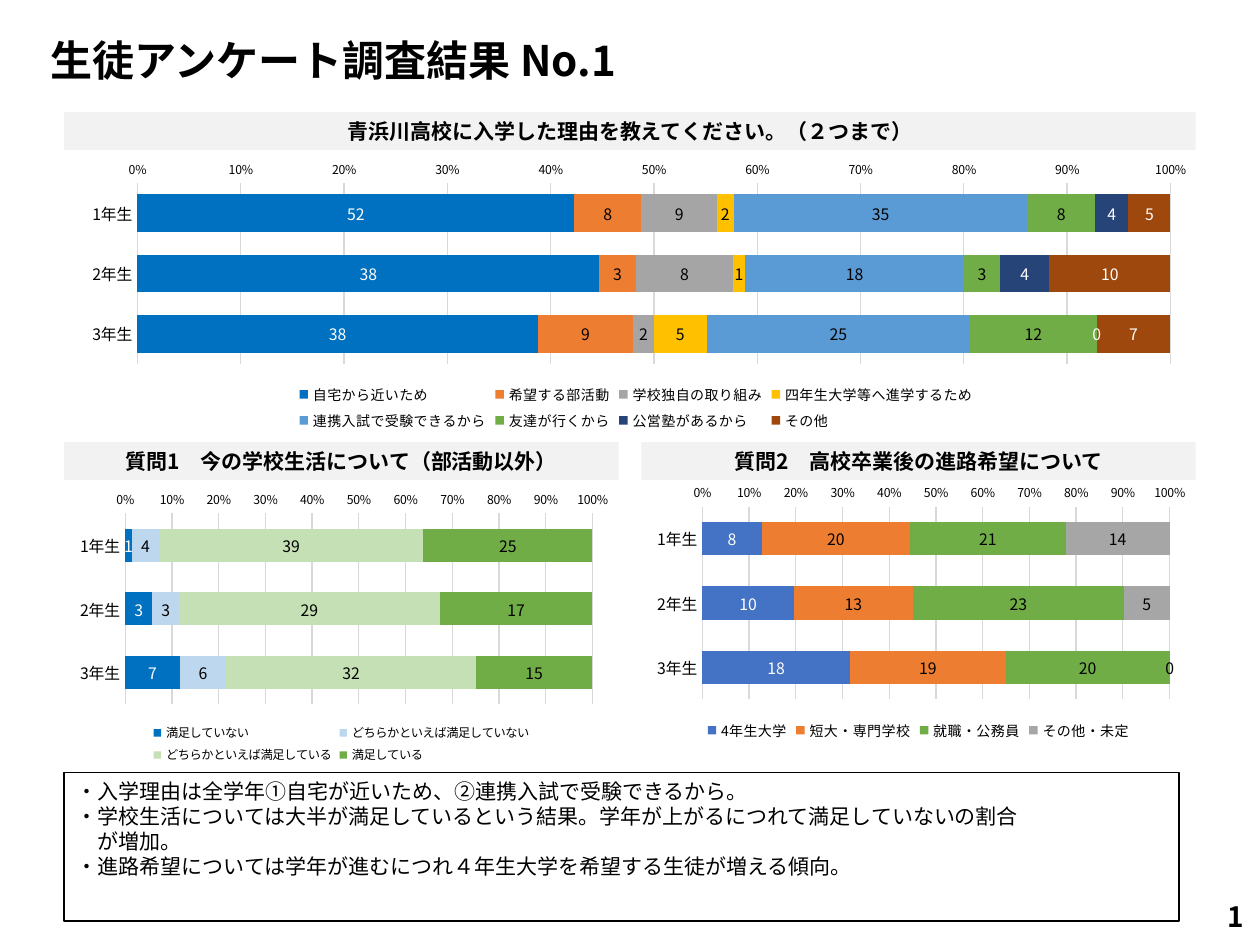
import pptx
import pptx.chart.data
import pptx.dml.color
import pptx.enum.chart
import pptx.enum.shapes
import pptx.enum.text
import pptx.oxml
import pptx.oxml.ns
import pptx.util
from pptx.util import Inches

FONT = "Noto Sans CJK JP"
BLACK, WHITE, GRID = "000000", "FFFFFF", "D9D9D9"
GRADES = ["1年生", "2年生", "3年生"]
LEFT, RIGHT_COLUMN, HALF_WIDTH = 0.51, 5.09, 4.4

REASONS = [
    ("自宅から近いため", (52, 38, 38), "0070C0", WHITE),
    ("希望する部活動", (8, 3, 9), "ED7D31", BLACK),
    ("学校独自の取り組み", (9, 8, 2), "A5A5A5", BLACK),
    ("四年生大学等へ進学するため", (2, 1, 5), "FFC000", BLACK),
    ("連携入試で受験できるから", (35, 18, 25), "5B9BD5", BLACK),
    ("友達が行くから", (8, 3, 12), "70AD47", BLACK),
    ("公営塾があるから", (4, 4, 0), "264478", WHITE),
    ("その他", (5, 10, 7), "9E480E", WHITE),
]
SATISFACTION = [
    ("満足していない", (1, 3, 7), "0070C0", WHITE),
    ("どちらかといえば満足していない", (4, 3, 6), "BDD7EE", BLACK),
    ("どちらかといえば満足している", (39, 29, 32), "C5E0B4", BLACK),
    ("満足している", (25, 17, 15), "70AD47", BLACK),
]
FUTURE_PATHS = [
    ("4年生大学", (8, 10, 18), "4472C4", WHITE),
    ("短大・専門学校", (20, 13, 19), "ED7D31", BLACK),
    ("就職・公務員", (21, 23, 20), "70AD47", BLACK),
    ("その他・未定", (14, 5, 0), "A6A6A6", BLACK),
]
FINDINGS = [
    ["・入学理由は全学年①自宅が近いため、②連携入試で受験できるから。"],
    ["・学校生活については大半が満足しているという結果。学年が上がるにつれて満足していないの割合", "が増加。"],
    ["・進路希望については学年が進むにつれ４年生大学を希望する生徒が増える傾向。"],
]


def rgb(value):
    return pptx.dml.color.RGBColor.from_string(value)


def style_font(font, size, color=BLACK, bold=False):
    font.name = FONT
    font.size = pptx.util.Pt(size)
    font.bold = bold
    font.color.rgb = rgb(color)


def set_east_asian_font(element):
    for latin in list(element.iter(pptx.oxml.ns.qn("a:latin"))):
        latin.addnext(pptx.oxml.parse_xml(
            f'<a:ea {pptx.oxml.ns.nsdecls("a")} typeface="{FONT}"/>'))


def place(shape, left, top, width, height):
    shape.left, shape.top = Inches(left), Inches(top)
    shape.width, shape.height = Inches(width), Inches(height)


def add_run(paragraph, text, size, bold=False):
    run = paragraph.add_run()
    run.text = text
    style_font(run.font, size, bold=bold)


def write_line(shape, text, size, alignment):
    frame = shape.text_frame
    frame.word_wrap = True
    frame.auto_size = pptx.enum.text.MSO_AUTO_SIZE.NONE
    frame.vertical_anchor = pptx.enum.text.MSO_ANCHOR.MIDDLE
    paragraph = frame.paragraphs[0]
    paragraph.alignment = alignment
    add_run(paragraph, text, size, bold=True)


def add_rectangle(slide, left, top, width, height):
    shape = slide.shapes.add_shape(
        pptx.enum.shapes.MSO_SHAPE.RECTANGLE,
        Inches(left), Inches(top), Inches(width), Inches(height))
    shape.shadow.inherit = False
    return shape


def add_heading(slide, text, left, top, width):
    shape = add_rectangle(slide, left, top, width, 0.3)
    shape.fill.solid()
    shape.fill.fore_color.rgb = rgb("F2F2F2")
    shape.line.fill.background()
    write_line(shape, text, 12, pptx.enum.text.PP_ALIGN.CENTER)


def set_plot_layout(chart, x, y, width, height):
    plot_area = chart.element.find(".//" + pptx.oxml.ns.qn("c:plotArea"))
    for layout in plot_area.findall(pptx.oxml.ns.qn("c:layout")):
        plot_area.remove(layout)
    plot_area.insert(0, pptx.oxml.parse_xml(
        f'<c:layout {pptx.oxml.ns.nsdecls("c")}><c:manualLayout>'
        '<c:layoutTarget val="inner"/><c:xMode val="edge"/><c:yMode val="edge"/>'
        f'<c:x val="{x}"/><c:y val="{y}"/><c:w val="{width}"/><c:h val="{height}"/>'
        '</c:manualLayout></c:layout>'))


def style_axes(chart):
    for axis, size in ((chart.category_axis, 9), (chart.value_axis, 7)):
        axis.major_tick_mark = pptx.enum.chart.XL_TICK_MARK.NONE
        axis.minor_tick_mark = pptx.enum.chart.XL_TICK_MARK.NONE
        style_font(axis.tick_labels.font, size)
    categories, values = chart.category_axis, chart.value_axis
    categories.reverse_order = True
    categories.has_major_gridlines = False
    values.has_major_gridlines = True
    values.major_unit = 0.1
    values.tick_labels.number_format = "0%"
    values.tick_labels.number_format_is_linked = False
    values.format.line.fill.background()
    for line in (categories.format.line, values.major_gridlines.format.line):
        line.color.rgb = rgb(GRID)
        line.width = pptx.util.Pt(0.75)


def add_answer_chart(slide, answers, box, layout, gap, legend_size):
    data = pptx.chart.data.CategoryChartData()
    data.categories = GRADES
    for name, values, _, _ in answers:
        data.add_series(name, values)
    chart = slide.shapes.add_chart(
        pptx.enum.chart.XL_CHART_TYPE.BAR_STACKED_100,
        *[Inches(length) for length in box], data).chart
    style_font(chart.font, 10)
    chart.has_title = False
    chart.has_legend = True
    chart.legend.position = pptx.enum.chart.XL_LEGEND_POSITION.BOTTOM
    chart.legend.include_in_layout = False
    style_font(chart.legend.font, legend_size)
    style_axes(chart)
    plot = chart.plots[0]
    plot.gap_width = gap
    plot.overlap = 100
    plot.vary_by_categories = False
    for series, (_, _, color, label_color) in zip(plot.series, answers):
        series.format.fill.solid()
        series.format.fill.fore_color.rgb = rgb(color)
        labels = series.data_labels
        labels.show_value = True
        labels.position = pptx.enum.chart.XL_LABEL_POSITION.CENTER
        style_font(labels.font, 9, label_color)
    set_plot_layout(chart, *layout)
    set_east_asian_font(chart.element)


def write_findings(slide):
    border = add_rectangle(slide, LEFT, 6.13, 8.85, 1.18)
    border.fill.background()
    border.line.color.rgb = rgb(BLACK)
    border.line.width = pptx.util.Pt(1)
    body = slide.placeholders[1]
    place(body, LEFT, 6.13, 8.85, 1.21)
    frame = body.text_frame
    frame.auto_size = pptx.enum.text.MSO_AUTO_SIZE.NONE
    for index, lines in enumerate(FINDINGS):
        paragraph = frame.add_paragraph() if index else frame.paragraphs[0]
        paragraph.space_before = pptx.util.Pt(0)
        paragraph.line_spacing = pptx.util.Pt(14.3)
        properties = paragraph._p.get_or_add_pPr()
        properties.set("marL", str(pptx.util.Pt(12)))
        properties.set("indent", str(-pptx.util.Pt(12)))
        properties.append(pptx.oxml.parse_xml(
            f'<a:buNone {pptx.oxml.ns.nsdecls("a")}/>'))
        for number, line in enumerate(lines):
            if number:
                paragraph.add_line_break()
            add_run(paragraph, line, 12)


def main():
    presentation = pptx.Presentation()
    presentation.slide_width, presentation.slide_height = Inches(10), Inches(7.5)
    slide = presentation.slides.add_slide(presentation.slide_layouts[1])
    title = slide.shapes.title
    place(title, 0.3, 0.22, 9.7, 0.5)
    write_line(title, "生徒アンケート調査結果 No.1", 24, pptx.enum.text.PP_ALIGN.LEFT)

    add_answer_chart(slide, REASONS, (LEFT, 1.23, 9.08, 2.23),
                     (0.064, 0.1, 0.903, 0.644), 60, 8)
    add_heading(slide, "青浜川高校に入学した理由を教えてください。（２つまで）", LEFT, 0.89, 8.98)
    add_heading(slide, "質問1　今の学校生活について（部活動以外）", LEFT, 3.51, HALF_WIDTH)
    add_heading(slide, "質問2　高校卒業後の進路希望について", RIGHT_COLUMN, 3.51, HALF_WIDTH)
    add_answer_chart(slide, SATISFACTION, (LEFT, 3.85, HALF_WIDTH, 2.25),
                     (0.11, 0.1, 0.843, 0.674), 93, 7)
    add_answer_chart(slide, FUTURE_PATHS, (RIGHT_COLUMN, 3.81, HALF_WIDTH, 2.11),
                     (0.11, 0.1, 0.843, 0.726), 92, 8)
    write_findings(slide)

    page_number = slide.shapes.add_textbox(
        Inches(7.72), Inches(7.07), Inches(2.25), Inches(0.4))
    write_line(page_number, "1", 16, pptx.enum.text.PP_ALIGN.RIGHT)
    set_east_asian_font(slide.element)
    presentation.save("out.pptx")


if __name__ == "__main__":
    main()
